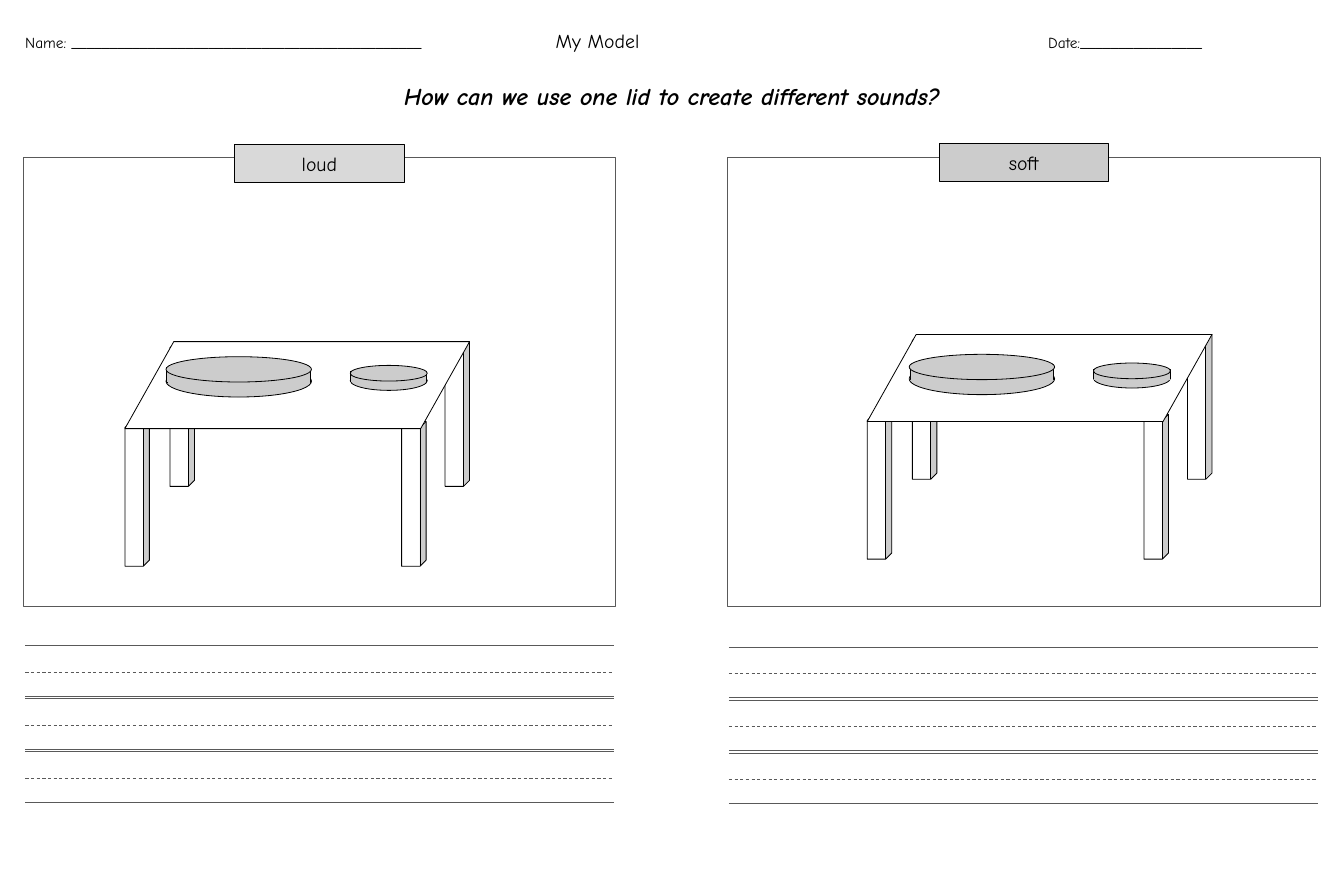
"""Build a worksheet slide with two table drawings and writing lines."""
from pptx import Presentation
from pptx.dml.color import RGBColor
from pptx.enum.dml import MSO_LINE
from pptx.enum.shapes import MSO_CONNECTOR, MSO_SHAPE as Preset
from pptx.enum.text import MSO_ANCHOR as Anchor, PP_ALIGN as Align
from pptx.oxml.ns import qn
from pptx.util import Emu, Pt
from lxml.etree import SubElement

PX = 9144
SLIDE_SIZE = (1700, 1100)
THEME = {
    "font": "Comic Neue", "ink": "000000", "rule": "595959", "white": "FFFFFF",
    "lid": "CCCCCC", "loud": "D9D9D9", "soft": "CCCCCC",
    "small": 14, "medium": 18, "large": 22, "thin": 0.75, "thick": 3,
}

HEADER = [
    ("Name: ______________________________________________", "small"),
    ("\tMy Model", "medium"),
    ("\tDate:________________", "small"),
]
HEADER_BOX = (22, 26, 1655, 68)
HEADER_TABS = (671, 1294)
QUESTION = "How can we use one lid to create different sounds?"
QUESTION_BOX = (355, 87, 990, 68)

PANELS = [
    {"label": "loud", "frame": (29, 199), "tag": (297, 183), "lines": (32, 816),
     "table": (158, 432), "lids": [(210, 451, 1, 1), (443, 462, 0.53, 0.62)]},
    {"label": "soft", "frame": (920, 199), "tag": (1188, 181), "lines": (922, 818),
     "table": (1097, 423), "lids": [(1150, 448, 1, 1), (1383, 459, 0.53, 0.62)]},
]
FRAME_SIZE = (750, 568)
TAG_SIZE = (214, 48)
LEG_SIZE = (31, 183)
LEG_OFFSETS = [(0, 101), (57, 0), (405, 0), (350, 101)]
TOP_SIZE = (436, 110)
TOP_SLANT = 0.562
LID_BASE = (0, 11, 184, 40)
LID_SIDE = (1, 13, 182, 19)
LID_SEAM = (2, 31, 180, 0)
LID_TOP = (0, 0, 184, 32)
LINE_WIDTH = 745
LINE_ROWS = 3
ROW_PITCH = 67
ROW_LINES = [(0, False), (34, True), (64, False)]


def color(name):
    """Return a theme colour."""
    return RGBColor.from_string(THEME[name])


def emu(lengths):
    """Turn px lengths into EMU."""
    return [Emu(round(length * PX)) for length in lengths]


def apply(target, values):
    """Set each named attribute on the target."""
    for name, value in values.items():
        setattr(target, name, value)


def add_shape(shapes, preset, box, fill=None, line="ink"):
    """Draw an outlined preset shape."""
    shape = shapes.add_shape(preset, *emu(box))
    shape.shadow.inherit = False
    if fill:
        shape.fill.solid()
        shape.fill.fore_color.rgb = color(fill)
    else:
        shape.fill.background()
    shape.line.color.rgb = color(line)
    shape.line.width = Pt(THEME["thin"])
    return shape


def add_line(shapes, left, top, width, ink="rule", weight="thin", dashed=False):
    """Draw a horizontal line."""
    ends = emu((left, top, left + width, top))
    line = shapes.add_connector(MSO_CONNECTOR.STRAIGHT, *ends)
    SubElement(line._element.spPr, qn("a:effectLst"))
    line.line.color.rgb = color(ink)
    line.line.width = Pt(THEME[weight])
    if dashed:
        line.line.dash_style = MSO_LINE.DASH


def write(shape, spans, anchor=Anchor.TOP, paragraph=None, font=None):
    """Put one formatted paragraph into a shape."""
    frame = shape.text_frame
    margins = ("margin_left", "margin_top", "margin_right", "margin_bottom")
    apply(frame, {"word_wrap": True, "vertical_anchor": anchor,
                  **dict.fromkeys(margins, Emu(10 * PX))})
    para = frame.paragraphs[0]
    apply(para, paragraph or {})
    for text, size in spans:
        span = para.add_run()
        span.text = text
        apply(span.font, {"name": THEME["font"], "size": Pt(THEME[size]), **(font or {})})
        span.font.color.rgb = color("ink")
    return para


def add_heading(shapes):
    """Add the name line and the question."""
    para = write(shapes.add_textbox(*emu(HEADER_BOX)), HEADER)
    tabs = SubElement(para._p.get_or_add_pPr(), qn("a:tabLst"))
    for position in emu(HEADER_TABS):
        SubElement(tabs, qn("a:tab"), pos=str(position), algn="l")
    write(shapes.add_textbox(*emu(QUESTION_BOX)), [(QUESTION, "large")],
          paragraph={"alignment": Align.CENTER, "line_spacing": 1.15},
          font={"bold": True, "italic": True})


def add_lid(shapes, left, top, across, down):
    """Draw a grouped lid scaled to its size."""
    def place(part):
        x, y, width, height = part
        return left + x * across, top + y * down, width * across, height * down

    lid = shapes.add_group_shape().shapes
    add_shape(lid, Preset.OVAL, place(LID_BASE), "lid")
    add_shape(lid, Preset.RECTANGLE, place(LID_SIDE), "lid")
    add_line(lid, *place(LID_SEAM)[:3], ink="lid", weight="thick")
    add_shape(lid, Preset.OVAL, place(LID_TOP), "lid")


def add_table_drawing(shapes, left, top):
    """Draw four legs under a slanted table top."""
    for x, y in LEG_OFFSETS:
        add_shape(shapes, Preset.CUBE, (left + x, top + y, *LEG_SIZE), "white")
    board = add_shape(shapes, Preset.PARALLELOGRAM, (left, top, *TOP_SIZE), "white")
    board.adjustments[0] = TOP_SLANT


def add_panel(shapes, panel):
    """Add one framed drawing with its label and writing lines."""
    label = panel["label"]
    add_shape(shapes, Preset.RECTANGLE, (*panel["frame"], *FRAME_SIZE), line="rule")
    left, top = panel["lines"]
    for row in range(LINE_ROWS):
        for offset, dashed in ROW_LINES:
            add_line(shapes, left, top + row * ROW_PITCH + offset, LINE_WIDTH, dashed=dashed)
    tag = add_shape(shapes, Preset.RECTANGLE, (*panel["tag"], *TAG_SIZE), label)
    write(tag, [(label, "medium")], Anchor.MIDDLE, {"alignment": Align.CENTER})
    add_table_drawing(shapes, *panel["table"])
    for lid in panel["lids"]:
        add_lid(shapes, *lid)


def main():
    """Build and save the deck."""
    deck = Presentation()
    deck.slide_width, deck.slide_height = emu(SLIDE_SIZE)
    page = deck.slides.add_slide(deck.slide_layouts[6])
    add_heading(page.shapes)
    for panel in PANELS:
        add_panel(page.shapes, panel)
    deck.save("out.pptx")


if __name__ == "__main__":
    main()
